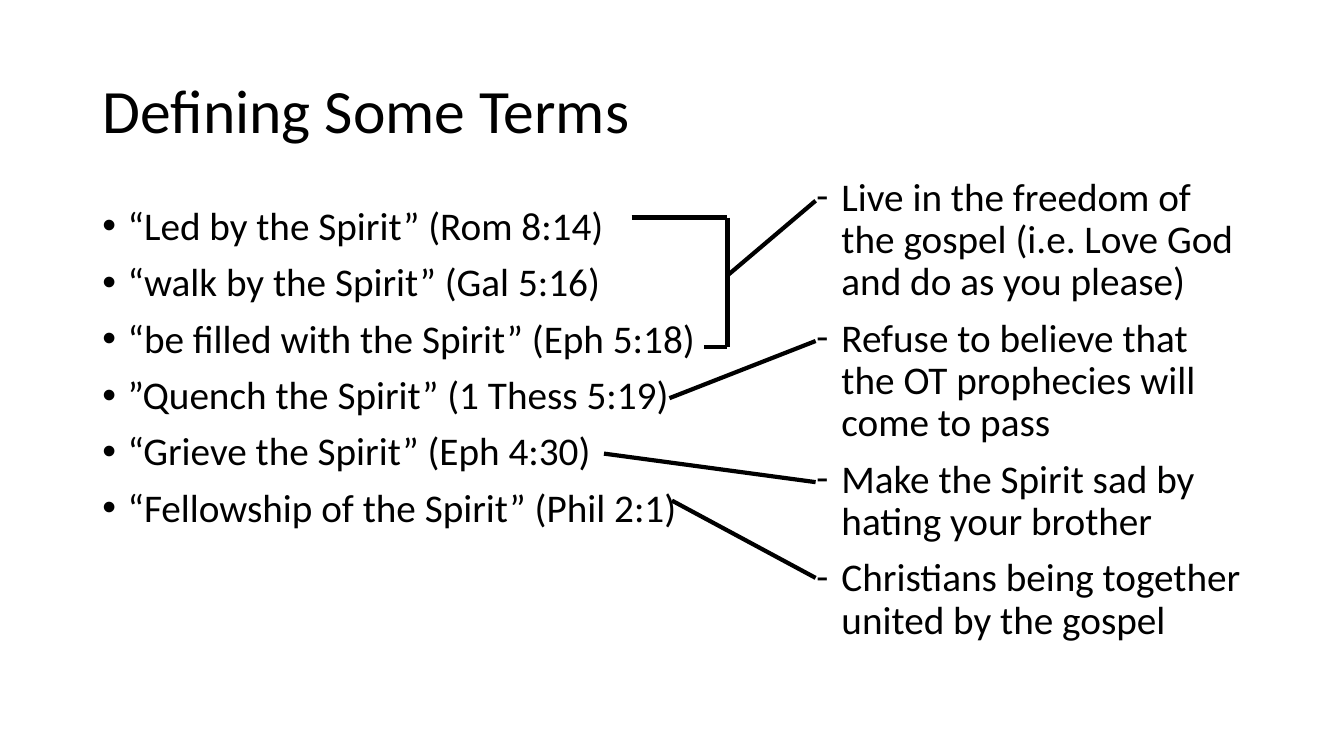
from lxml import etree
from pptx import Presentation
from pptx.dml.color import RGBColor
from pptx.enum.shapes import MSO_CONNECTOR
from pptx.enum.text import MSO_ANCHOR, MSO_AUTO_SIZE, PP_ALIGN
from pptx.oxml.ns import qn
from pptx.util import Inches, Pt

BLACK = RGBColor(0x00, 0x00, 0x00)
WHITE = RGBColor(0xFF, 0xFF, 0xFF)
STRAIGHT = MSO_CONNECTOR.STRAIGHT
MIDDLE, TOP = MSO_ANCHOR.MIDDLE, MSO_ANCHOR.TOP
NO_FIT = MSO_AUTO_SIZE.NONE
LEFT = PP_ALIGN.LEFT
COLUMNS, ROWS = 80, 45

TERMS = [
    "“Led by the Spirit” (Rom 8:14)",
    "“walk by the Spirit” (Gal 5:16)",
    "“be filled with the Spirit” (Eph 5:18)",
    "”Quench the Spirit” (1 Thess 5:19)",
    "“Grieve the Spirit” (Eph 4:30)",
    "“Fellowship of the Spirit” (Phil 2:1)",
]
MEANINGS = [
    "Live in the freedom of the gospel (i.e. Love God and do as you please)",
    "Refuse to believe that the OT prophecies will come to pass",
    "Make the Spirit sad by hating your brother",
    "Christians being together united by the gospel",
]


class TermsSlide:
    font = "Calibri"
    title_size = Pt(44)
    list_size = Pt(28)
    line_width = Pt(3)
    indent = Inches(0.25)

    def __init__(self, deck):
        self.column = deck.slide_width / COLUMNS
        self.row = deck.slide_height / ROWS
        self.slide = deck.slides.add_slide(deck.slide_layouts[1])
        background = self.slide.background.fill
        background.solid()
        background.fore_color.rgb = WHITE

    def point(self, column, row):
        return round(column * self.column), round(row * self.row)

    def place(self, holder, area, anchor):
        holder.left, holder.top = self.point(*area[:2])
        holder.width, holder.height = self.point(*area[2:])
        frame = holder.text_frame
        frame.word_wrap = True
        frame.auto_size = NO_FIT
        frame.vertical_anchor = anchor
        return frame

    def style(self, paragraph, size):
        paragraph.alignment = LEFT
        paragraph.line_spacing = 0.9
        for run in paragraph.runs:
            run.font.name = self.font
            run.font.size = size
            run.font.color.rgb = BLACK

    def title(self, wording, area):
        frame = self.place(self.slide.shapes.title, area, MIDDLE)
        frame.text = wording
        self.style(frame.paragraphs[0], self.title_size)

    def bullets(self, holder, entries, area, mark, mark_font):
        frame = self.place(holder, area, TOP)
        frame.text = "\n".join(entries)
        for number, paragraph in enumerate(frame.paragraphs):
            properties = paragraph._p.get_or_add_pPr()
            properties.set("marL", str(self.indent))
            properties.set("indent", str(-self.indent))
            etree.SubElement(properties, qn("a:buFont"), typeface=mark_font)
            etree.SubElement(properties, qn("a:buChar"), char=mark)
            paragraph.space_before = Pt(10 if number else 0)
            paragraph.space_after = Pt(0)
            self.style(paragraph, self.list_size)

    def term_list(self, entries, area):
        self.bullets(self.slide.placeholders[1], entries, area, "•", "Arial")

    def meaning_list(self, entries, area):
        holder = self.slide.shapes.add_textbox(0, 0, 0, 0)
        self.bullets(holder, entries, area, "-", self.font)

    def link(self, start, end):
        line = self.slide.shapes.add_connector(
            STRAIGHT, *self.point(*start), *self.point(*end))
        line.line.color.rgb = BLACK
        line.line.width = self.line_width
        etree.SubElement(line._element.spPr, qn("a:effectLst"))


def main():
    deck = Presentation()
    deck.slide_width, deck.slide_height = Inches(13.33), Inches(7.5)
    terms = TermsSlide(deck)
    terms.title("Defining Some Terms", (5.5, 2.4, 69, 8.7))
    terms.term_list(TERMS, (5.5, 12, 39, 28.55))
    terms.meaning_list(MEANINGS, (48, 10.25, 26.5, 30.3))

    bracket, bracket_top, bracket_bottom = 43.3, 12.95, 20.65
    terms.link((37.6, bracket_top), (bracket, bracket_top))
    terms.link((bracket, bracket_top), (bracket, bracket_bottom))
    terms.link((41.9, bracket_bottom), (bracket, bracket_bottom))

    meaning_edge = 48.55
    for term_end, meaning_row in [
        ((bracket, 16.4), 11.95),
        ((39.85, 23.7), 20.3),
        ((35.95, 27), 28.7),
        ((40, 29.8), 34.4),
    ]:
        terms.link(term_end, (meaning_edge, meaning_row))
    deck.save("out.pptx")


if __name__ == "__main__":
    main()
